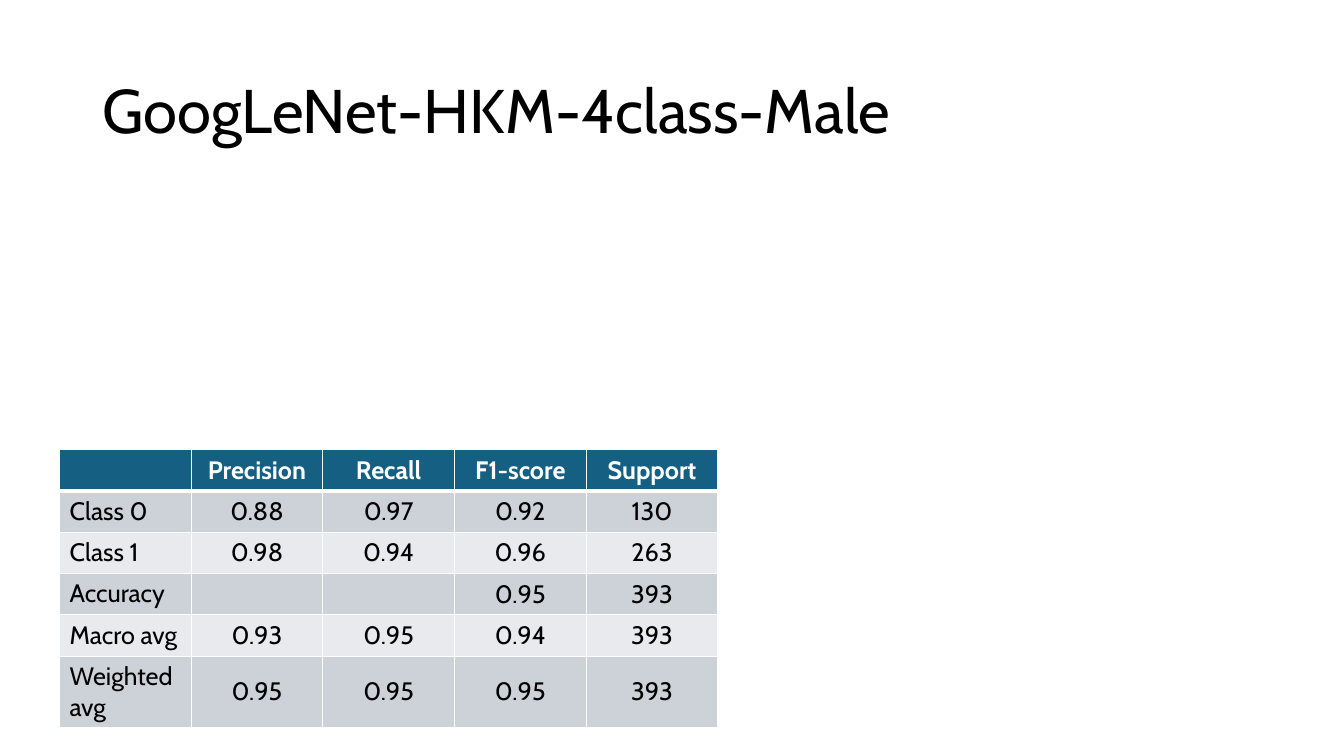
from dataclasses import dataclass

from lxml import etree
from pptx import Presentation, util as u
from pptx.dml.color import RGBColor
from pptx.enum import text
from pptx.oxml.ns import qn


@dataclass(frozen=True)
class Theme:
    font: str = "Cabin"
    ink: str = "000000"
    paper: str = "FFFFFF"
    header: str = "156082"
    bands: tuple = ("CCD2D8", "E8EAED")
    title_size: int = 44
    table_size: int = 18
    rule: int = 1
    header_rule: int = 3


THEME = Theme()
WIDTH, HEIGHT = 13.33, 7.5
TITLE_BOX = (0.92, 0.4, 11.5, 1.45)
TABLE_BOX = (0.59, 4.46, 6.53, 2.46)

SCORES = [
    ("", "Precision", "Recall", "F1-score", "Support"),
    ("Class 0", "0.88", "0.97", "0.92", "130"),
    ("Class 1", "0.98", "0.94", "0.96", "263"),
    ("Accuracy", "", "", "0.95", "393"),
    ("Macro avg", "0.93", "0.95", "0.94", "393"),
    ("Weighted avg", "0.95", "0.95", "0.95", "393"),
]


def format_text(p, size, color, align, bold=False):
    p.alignment = align
    for font in [p.font] + [r.font for r in p.runs]:
        font.name, font.size, font.bold = THEME.font, u.Pt(size), bold
        font.color.rgb = RGBColor.from_string(color)


def set_borders(cell, top, bottom):
    """Draw the cell's edges; top and bottom are widths in points."""
    tc_pr = cell._tc.get_or_add_tcPr()
    edges = {"lnL": THEME.rule, "lnR": THEME.rule, "lnT": top, "lnB": bottom}
    for i, (tag, width) in enumerate(edges.items()):
        ln = etree.Element(qn(f"a:{tag}"), w=str(u.Pt(width)))
        fill = etree.SubElement(ln, qn("a:solidFill"))
        etree.SubElement(fill, qn("a:srgbClr"), val=THEME.paper)
        tc_pr.insert(i, ln)


def add_title(s, box, title):
    sp = s.shapes.title
    sp.left, sp.top, sp.width, sp.height = map(u.Inches, box)
    tf = sp.text_frame
    tf.text = title
    tf.word_wrap = True
    tf.vertical_anchor = text.MSO_ANCHOR.MIDDLE
    p = tf.paragraphs[0]
    p.line_spacing = 0.9
    format_text(p, THEME.title_size, THEME.ink, text.PP_ALIGN.LEFT)


def format_cell(cell, row, col):
    is_header = row == 0
    cell.fill.solid()
    cell.fill.fore_color.rgb = RGBColor.from_string(
        THEME.header if is_header else THEME.bands[(row - 1) % 2])
    set_borders(cell, THEME.header_rule if row == 1 else THEME.rule,
                THEME.header_rule if is_header else THEME.rule)
    cell.vertical_anchor = text.MSO_ANCHOR.MIDDLE if col else text.MSO_ANCHOR.TOP
    format_text(cell.text_frame.paragraphs[0], THEME.table_size,
                THEME.paper if is_header else THEME.ink,
                text.PP_ALIGN.CENTER if col else text.PP_ALIGN.LEFT, is_header)


def add_score_table(s, box, scores):
    left, top, width, height = map(u.Inches, box)
    rows, cols = len(scores), len(scores[0])
    table = s.shapes.add_table(rows, cols, left, top, width, height).table
    for row, values in enumerate(scores):
        for col, value in enumerate(values):
            cell = table.cell(row, col)
            cell.text = value
            format_cell(cell, row, col)


def main():
    prs = Presentation()
    prs.slide_width, prs.slide_height = u.Inches(WIDTH), u.Inches(HEIGHT)
    s = prs.slides.add_slide(prs.slide_layouts.get_by_name("Title Only"))
    add_title(s, TITLE_BOX, "GoogLeNet-HKM-4class-Male")
    add_score_table(s, TABLE_BOX, SCORES)
    prs.save("out.pptx")


if __name__ == "__main__":
    main()
